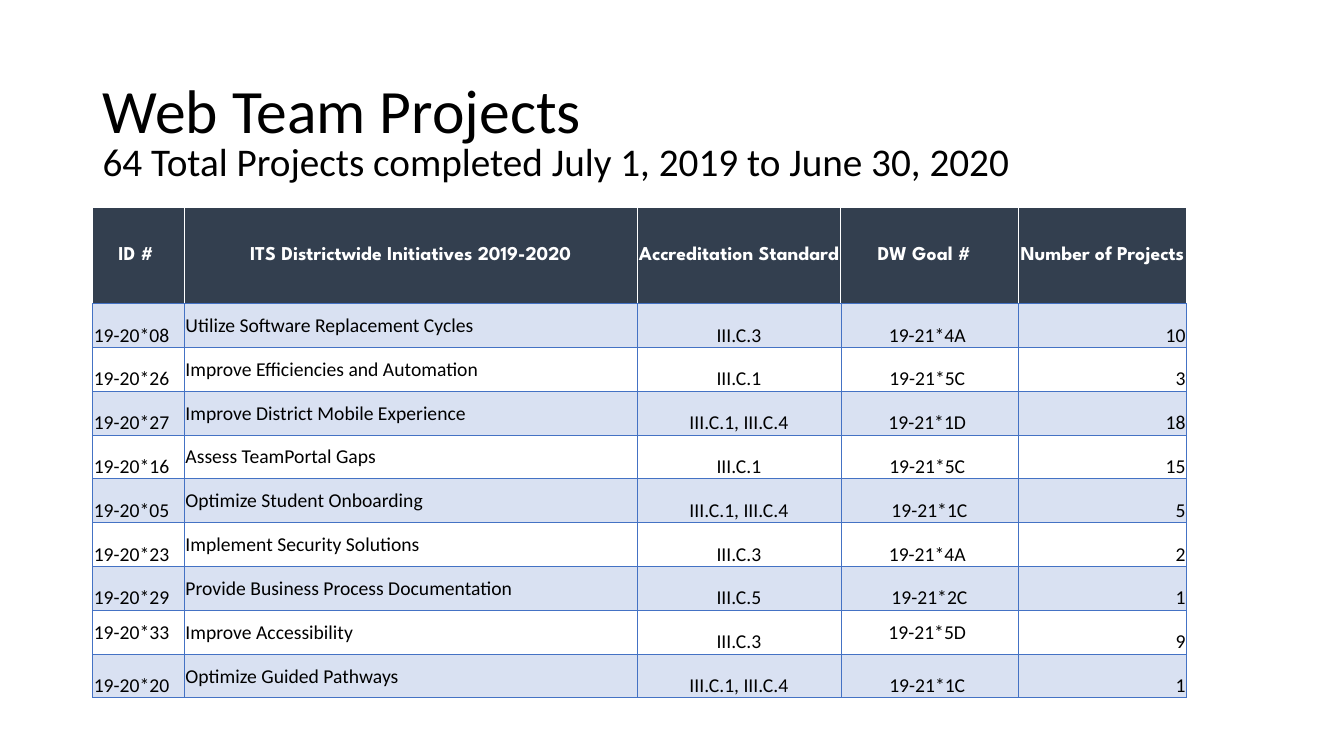
from lxml import etree
from pptx import Presentation
from pptx.dml.color import RGBColor
from pptx.enum.text import MSO_ANCHOR, PP_ALIGN
from pptx.oxml.ns import qn
from pptx.util import Inches, Pt

LEFT, CENTER, RIGHT = PP_ALIGN.LEFT, PP_ALIGN.CENTER, PP_ALIGN.RIGHT
TOP, MIDDLE, BOTTOM = MSO_ANCHOR.TOP, MSO_ANCHOR.MIDDLE, MSO_ANCHOR.BOTTOM

BLACK = RGBColor(0x00, 0x00, 0x00)
WHITE = RGBColor(0xFF, 0xFF, 0xFF)
NAVY = RGBColor(0x33, 0x3F, 0x4F)
PALE_BLUE = RGBColor(0xD9, 0xE1, 0xF2)
BLUE = RGBColor(0x44, 0x72, 0xC4)

HEADINGS = ["ID # ", "ITS Districtwide Initiatives 2019-2020", "Accreditation Standard",
            "DW Goal #  ", "Number of Projects"]
PROJECTS = [
    ("19-20*08 ", "Utilize Software Replacement Cycles ", "III.C.3", "19-21*4A ", "10"),
    ("19-20*26 ", "Improve Efficiencies and Automation ", "III.C.1", "19-21*5C ", "3"),
    ("19-20*27 ", "Improve District Mobile Experience ", "III.C.1, III.C.4", "19-21*1D ", "18"),
    ("19-20*16 ", "Assess TeamPortal Gaps ", "III.C.1", "19-21*5C ", "15"),
    ("19-20*05", "Optimize Student Onboarding ", "III.C.1, III.C.4", "19-21*1C", "5"),
    ("19-20*23 ", "Implement Security Solutions ", "III.C.3", "19-21*4A ", "2"),
    ("19-20*29", "Provide Business Process Documentation ", "III.C.5", "19-21*2C", "1"),
    ("19-20*33 ", "Improve Accessibility ", "III.C.3", "19-21*5D ", "9"),
    ("19-20*20 ", "Optimize Guided Pathways ", "III.C.1, III.C.4", "19-21*1C ", "1"),
]
COLUMN_WIDTHS = [0.91, 4.49, 2.02, 1.76, 1.67]
COLUMN_ALIGNS = [LEFT, LEFT, CENTER, CENTER, RIGHT]
HEADER_HEIGHT, ROW_HEIGHT = 0.95, 0.435
MIDDLE_CELLS = {(8, 0), (8, 3)}


def style_run(r, size, font, color, bold=False):
    r.font.size = Pt(size)
    r.font.name = font
    r.font.color.rgb = color
    r.font.bold = bold


def add_border(cell, side, color, width):
    ln = etree.SubElement(cell._tc.get_or_add_tcPr(), qn(f"a:ln{side}"), w=str(Pt(width)))
    fill = etree.SubElement(ln, qn("a:solidFill"))
    etree.SubElement(fill, qn("a:srgbClr"), val=str(color))


prs = Presentation()
prs.slide_width = Inches(13.33)
prs.slide_height = Inches(7.5)
s = prs.slides.add_slide(prs.slide_layouts[6])

for text, size, top, height, anchor in [
    ("Web Team Projects", 44, 0.4, 1.45, MIDDLE),
    ("64 Total Projects completed July 1, 2019 to June 30, 2020", 28, 1.37, 0.6, TOP),
]:
    sp = s.shapes.add_textbox(Inches(0.92), Inches(top), Inches(11.5), Inches(height))
    tf = sp.text_frame
    tf.word_wrap = True
    tf.vertical_anchor = anchor
    tf.text = text
    p = tf.paragraphs[0]
    p.line_spacing = 0.9
    style_run(p.runs[0], size, "Calibri", BLACK)

rows = [HEADINGS] + PROJECTS
table = s.shapes.add_table(
    len(rows), len(HEADINGS), Inches(0.92), Inches(2.06), Inches(sum(COLUMN_WIDTHS)),
    Inches(HEADER_HEIGHT + ROW_HEIGHT * len(PROJECTS))).table
for column, width in zip(table.columns, COLUMN_WIDTHS):
    column.width = Inches(width)

for i, row in enumerate(rows):
    header = i == 0
    table.rows[i].height = Inches(HEADER_HEIGHT if header else ROW_HEIGHT)
    for j, text in enumerate(row):
        cell = table.cell(i, j)
        cell.margin_left = cell.margin_right = cell.margin_top = Inches(0.01)
        cell.margin_bottom = 0
        cell.text = text
        p = cell.text_frame.paragraphs[0]
        for side in "LRTB":
            if header and side != "B":
                add_border(cell, side, WHITE, 1)
            else:
                add_border(cell, side, BLUE, 0.5)
        if header or i % 2:
            cell.fill.solid()
            cell.fill.fore_color.rgb = NAVY if header else PALE_BLUE
        else:
            cell.fill.background()
        if header:
            cell.vertical_anchor = MIDDLE
            p.alignment = CENTER
            style_run(p.runs[0], 14, "League Spartan", WHITE, True)
        else:
            cell.vertical_anchor = MIDDLE if j == 1 or (i, j) in MIDDLE_CELLS else BOTTOM
            p.alignment = COLUMN_ALIGNS[j]
            style_run(p.runs[0], 14, "Calibri", BLACK)

prs.save("out.pptx")
